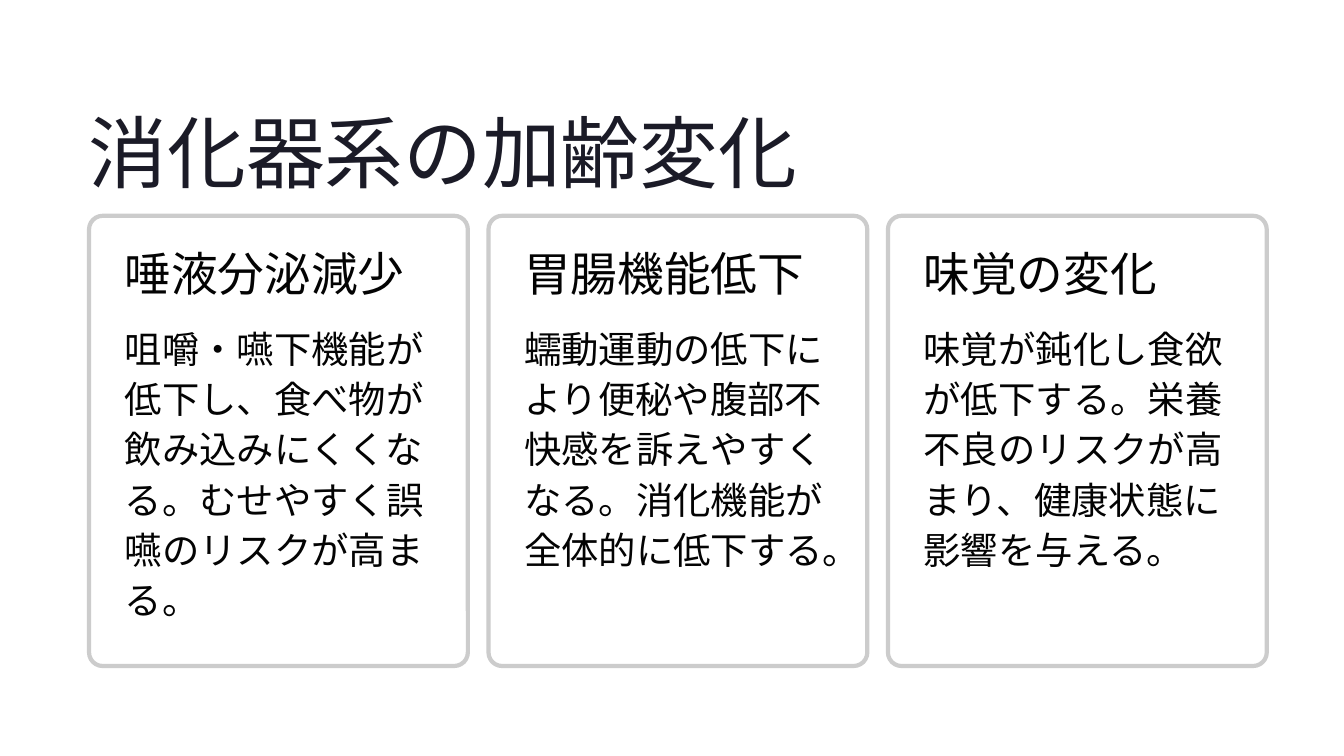
from lxml import etree
from pptx import Presentation
from pptx.dml.color import RGBColor
from pptx.enum.lang import MSO_LANGUAGE_ID
from pptx.enum.shapes import MSO_SHAPE
from pptx.oxml.ns import qn
from pptx.util import Pt

ROUNDED = MSO_SHAPE.ROUNDED_RECTANGLE
JAPANESE = MSO_LANGUAGE_ID.JAPANESE
COLORS = {"title": "1B1B27", "text": "030303", "card": "FFFFFF", "border": "CCCCCC"}

LEFT, CARD_TOP = 76.3, 185
CARD_W, CARD_H = 324.7, 385.9
PITCH = 342.4  # card width plus gap
INSET = 30.6
TEXT_W = CARD_W - 2 * INSET - 2

CARDS = [
    ("唾液分泌減少", "咀嚼・嚥下機能が低下し、食べ物が飲み込みにくくなる。むせやすく誤嚥のリスクが高まる。"),
    ("胃腸機能低下", "蠕動運動の低下により便秘や腹部不快感を訴えやすくなる。消化機能が全体的に低下する。"),
    ("味覚の変化", "味覚が鈍化し食欲が低下する。栄養不良のリスクが高まり、健康状態に影響を与える。"),
]


def add_text(text, x, y, w, h, font, size, spacing, color, wrap=False):
    tf = slide.shapes.add_textbox(Pt(x), Pt(y), Pt(w), Pt(h)).text_frame
    tf.margin_left = tf.margin_top = tf.margin_right = tf.margin_bottom = 0
    tf.word_wrap = wrap
    p = tf.paragraphs[0]
    p.text = text
    p.line_spacing = Pt(spacing)
    r = p.runs[0]
    r.font.name = font
    r.font.size = Pt(size)
    r.font.language_id = JAPANESE
    r.font.color.rgb = RGBColor.from_string(COLORS[color])
    # East Asian typeface
    ea = etree.Element(qn("a:ea"), typeface=font)
    r.font._element.find(qn("a:latin")).addnext(ea)


prs = Presentation()
prs.slide_width, prs.slide_height = Pt(1152), Pt(648)
slide = prs.slides.add_slide(prs.slide_layouts[6])

# Title
add_text("消化器系の加齢変化", LEFT, 85.7, 679, 85, "Inter", 67.5, 84.5, "title")

# Cards
for i, (heading, body) in enumerate(CARDS):
    x = LEFT + i * PITCH
    sp = slide.shapes.add_shape(ROUNDED, Pt(x), Pt(CARD_TOP), Pt(CARD_W), Pt(CARD_H))
    sp.adjustments[0] = 0.036
    sp.shadow.inherit = False
    sp.fill.solid()
    sp.fill.fore_color.rgb = RGBColor.from_string(COLORS["card"])
    fill_color = sp._element.spPr.find(qn("a:solidFill"))[0]
    etree.SubElement(fill_color, qn("a:alpha"), val="95000")
    sp.line.color.rgb = RGBColor.from_string(COLORS["border"])
    sp.line.width = Pt(3.6)

    add_text(heading, x + INSET, 216, TEXT_W, 48, "Inter", 40, 42, "text")
    add_text(body, x + INSET, 275, TEXT_W, 248.4, "Lato", 32, 43, "text", wrap=True)

prs.save("out.pptx")
